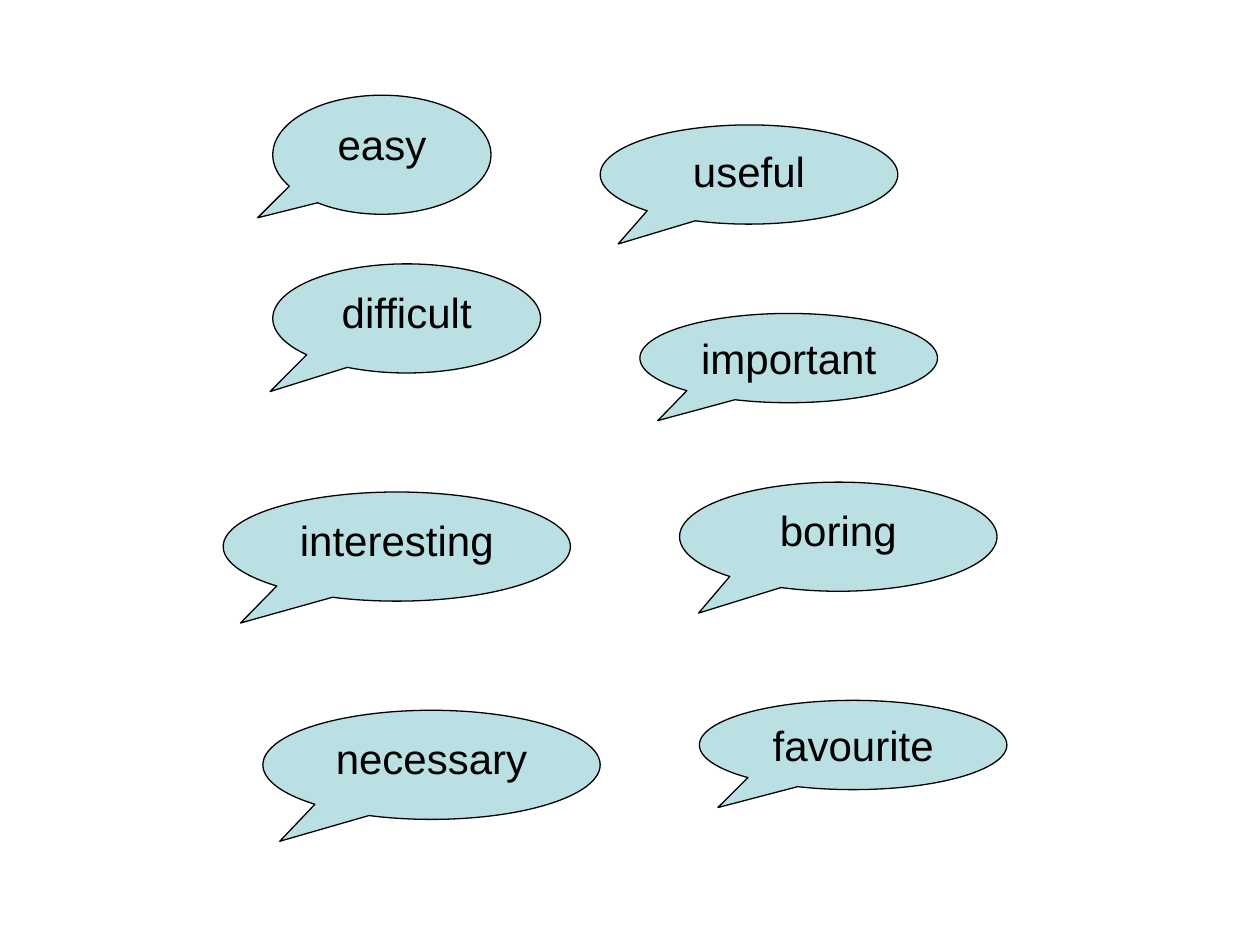
from typing import NamedTuple

import pptx
import pptx.dml.color
import pptx.enum.shapes
import pptx.enum.text
import pptx.util
from pptx.util import Cm


class Bubble(NamedTuple):
    word: str
    left: float
    top: float
    width: float
    height: float
    tail_x: float = -0.44
    tail_y: float = 0.7


BUBBLES = [
    Bubble("easy", 5.5, 1.92, 4.4, 2.4, -0.57, 0.53),
    Bubble("difficult", 5.5, 5.32, 5.4, 2.2, -0.51, 0.67),
    Bubble("interesting", 4.5, 9.92, 7, 2.2, -0.45),
    Bubble("necessary", 5.3, 14.32, 6.8, 2.2, -0.45),
    Bubble("useful", 12.1, 2.52, 6, 2),
    Bubble("important", 12.9, 6.32, 6, 1.8),
    Bubble("boring", 13.7, 9.72, 6.4, 2.2),
    Bubble("favourite", 14.1, 14.12, 6.2, 1.8),
]


def set_color(color_format, value: str) -> None:
    color_format.rgb = pptx.dml.color.RGBColor.from_string(value)


def draw_bubble(s: pptx.slide.Slide, bubble: Bubble) -> None:
    sp = s.shapes.add_shape(
        pptx.enum.shapes.MSO_SHAPE.OVAL_CALLOUT,
        Cm(bubble.left), Cm(bubble.top), Cm(bubble.width), Cm(bubble.height),
    )
    sp.adjustments[0] = bubble.tail_x
    sp.adjustments[1] = bubble.tail_y
    sp.shadow.inherit = False
    sp.fill.solid()
    set_color(sp.fill.fore_color, "BBE0E3")
    set_color(sp.line.color, "000000")
    sp.line.width = pptx.util.Pt(0.75)

    tf = sp.text_frame
    tf.word_wrap = True
    tf.vertical_anchor = pptx.enum.text.MSO_ANCHOR.TOP
    p = tf.paragraphs[0]
    p.alignment = pptx.enum.text.PP_ALIGN.CENTER
    r = p.add_run()
    r.text = bubble.word
    r.font.name = "Arial"
    r.font.size = pptx.util.Pt(24)
    set_color(r.font.color, "000000")


def main() -> None:
    prs = pptx.Presentation()
    prs.slide_width, prs.slide_height = Cm(25.4), Cm(19.05)
    s = prs.slides.add_slide(prs.slide_layouts[6])
    for bubble in BUBBLES:
        draw_bubble(s, bubble)
    prs.save("out.pptx")


if __name__ == "__main__":
    main()
